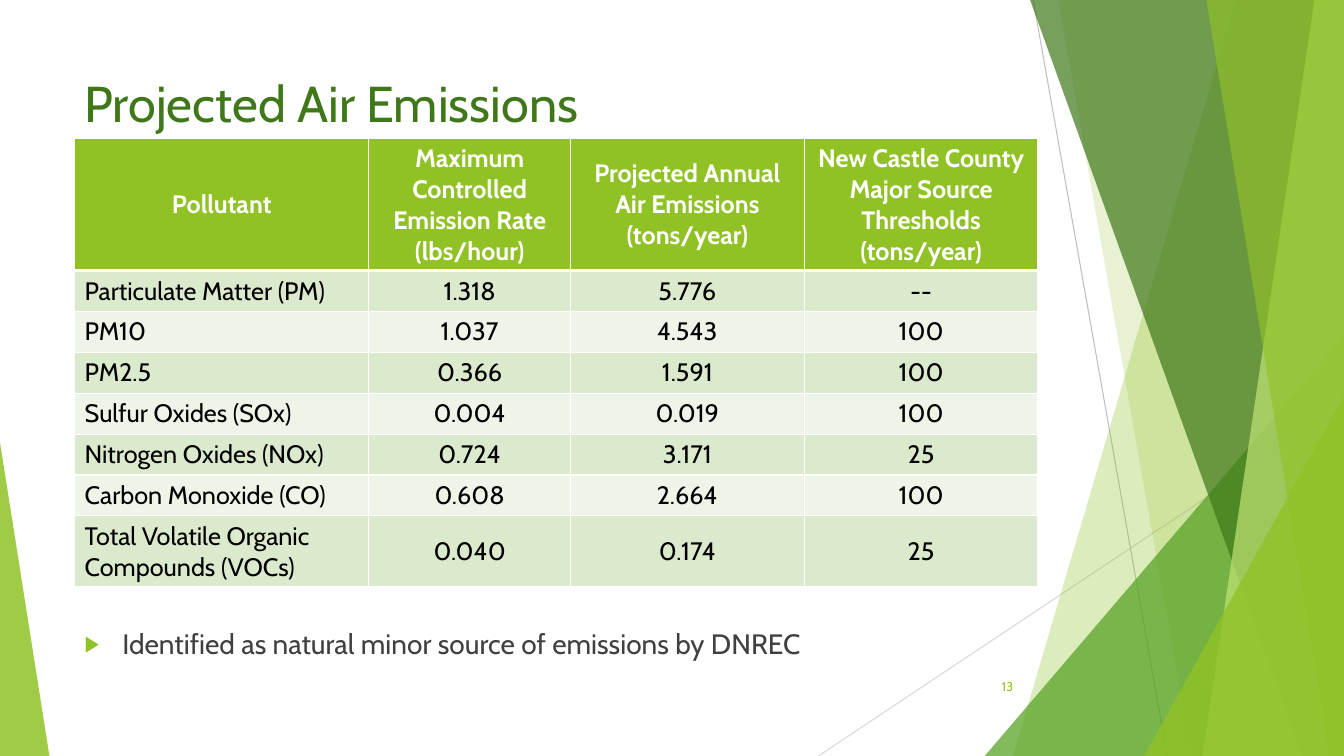
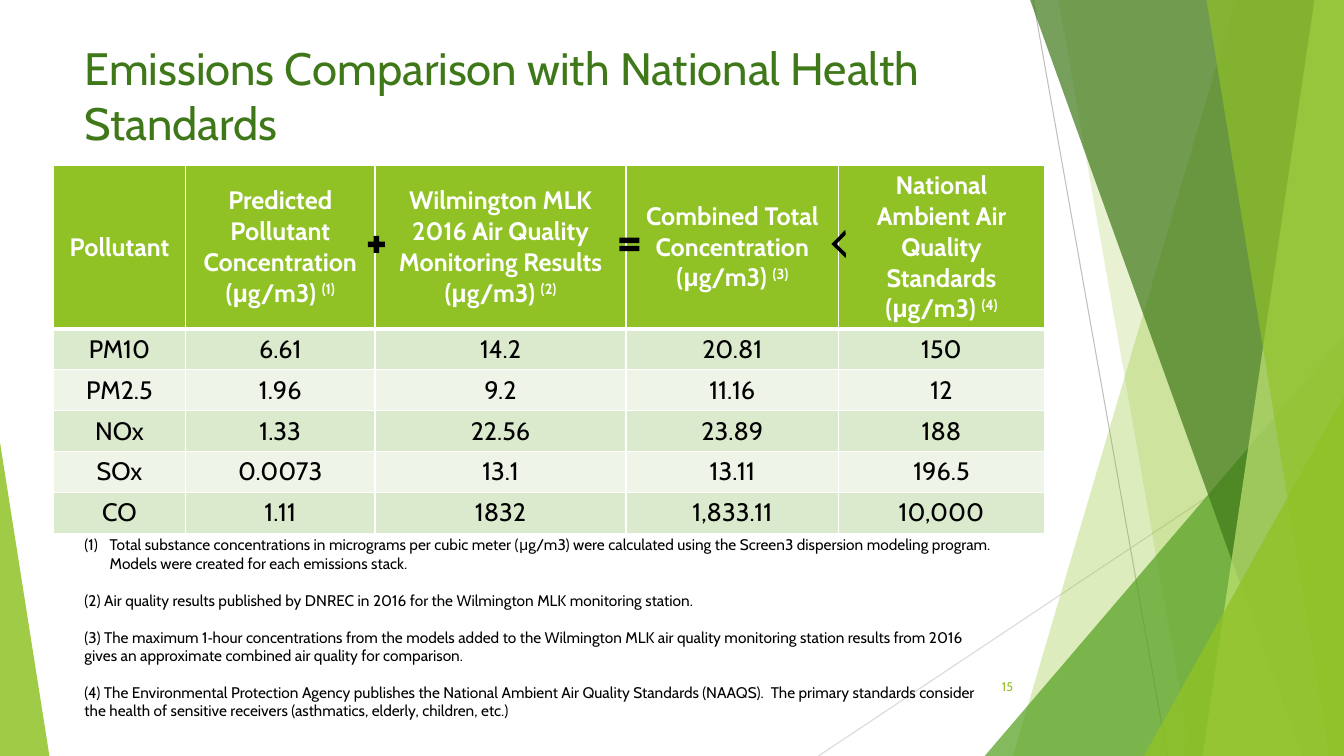
"""Build two slides on projected air emissions and national health standards."""
from lxml.etree import SubElement
from pptx import Presentation
from pptx.dml.color import RGBColor
from pptx.enum.shapes import MSO_CONNECTOR, MSO_SHAPE
from pptx.enum.text import MSO_ANCHOR as Anchor, PP_ALIGN as Align
from pptx.oxml.ns import qn
from pptx.util import Pt

LIME = RGBColor(0x90, 0xC2, 0x26)
PALE_LIME = RGBColor(0xC0, 0xE4, 0x74)
GREEN = RGBColor(0x54, 0xA0, 0x21)
DARK_GREEN = RGBColor(0x3F, 0x78, 0x19)
BANDS = (RGBColor(0xDB, 0xE9, 0xCD), RGBColor(0xEE, 0xF4, 0xE8))
WHITE = RGBColor(0xFF, 0xFF, 0xFF)
BLACK = RGBColor(0, 0, 0)
TEXT_GRAY = RGBColor(0x40, 0x40, 0x40)
LIGHT_GRAY = RGBColor(0xD9, 0xD9, 0xD9)
MID_GRAY = RGBColor(0xBF, 0xBF, 0xBF)
FONT, GREEK_FONT = "Cabin", "Arial"
WIDTH, HEIGHT = 960, 540
LEFT = 53.3
ROW_HEIGHT = 29.2

RAYS = [
    ((584.6, HEIGHT), (WIDTH, 290), LIGHT_GRAY),
    ((738, 0), (833.8, HEIGHT), MID_GRAY),
]
RIGHT_EDGE = [(WIDTH, HEIGHT), (WIDTH, 0)]
FACETS = [
    ([(882.7, 0), (723.6, HEIGHT), *RIGHT_EDGE], LIME, 30),
    ([(756, 0), (851, HEIGHT), *RIGHT_EDGE], LIME, 20),
    ([(703.4, HEIGHT), (WIDTH, 240), (WIDTH, HEIGHT)], GREEN, 72),
    ([(735.8, 0), (930.2, HEIGHT), *RIGHT_EDGE], DARK_GREEN, 70),
    ([(938.9, 0), (859, HEIGHT), *RIGHT_EDGE], PALE_LIME, 70),
    ([(861.8, 0), (949.7, HEIGHT), *RIGHT_EDGE], LIME, 65),
    ([(817.2, HEIGHT), (WIDTH, 283), (WIDTH, HEIGHT)], LIME, 80),
    ([(0, 316), (35.3, HEIGHT), (0, HEIGHT)], LIME, 85),
]

EMISSIONS_HEADER = [
    ("Pollutant", ""),
    ("Maximum Controlled Emission Rate (lbs/hour)", ""),
    ("Projected Annual Air Emissions (tons/year)", ""),
    ("New Castle County Major Source Thresholds\n(tons/year)", ""),
]
EMISSIONS = [
    ("Particulate Matter (PM)", "1.318", "5.776", "--"),
    ("PM10", "1.037", "4.543", "100"),
    ("PM2.5", "0.366", "1.591", "100"),
    ("Sulfur Oxides (SOx)", "0.004", "0.019", "100"),
    ("Nitrogen Oxides (NOx)", "0.724", "3.171", "25"),
    ("Carbon Monoxide (CO)", "0.608", "2.664", "100"),
    ("Total Volatile Organic Compounds (VOCs)", "0.040", "0.174", "25"),
]
EMISSIONS_NOTE = "Identified as natural minor source of emissions by DNREC"

STANDARDS_HEADER = [
    ("Pollutant", ""),
    ("Predicted Pollutant Concentration (μg/m3) ", "(1)"),
    ("Wilmington MLK 2016 Air Quality Monitoring Results (μg/m3) ", "(2)"),
    ("Combined Total Concentration (μg/m3) ", "(3)"),
    ("National Ambient Air Quality Standards (μg/m3) ", "(4)"),
]
STANDARDS = [
    ("PM10", "6.61", "14.2", "20.81", "150"),
    ("PM2.5", "1.96", "9.2", "11.16", "12"),
    ("NOx", "1.33", "22.56", "23.89", "188"),
    ("SOx", "0.0073", "13.1", "13.11", "196.5"),
    ("CO", "1.11", "1832", "1,833.11", "10,000"),
]
FOOTNOTES = [
    "Total substance concentrations in micrograms per cubic meter (μg/m3) were calculated using "
    "the Screen3 dispersion modeling program. Models were created for each emissions stack.",
    "(2) Air quality results published by DNREC in 2016 for the Wilmington MLK monitoring station.",
    "(3) The maximum 1‐hour concentrations from the models added to the Wilmington MLK air quality "
    "monitoring station results from 2016 gives an approximate combined air quality for comparison.",
    "(4) The Environmental Protection Agency publishes the National Ambient Air Quality Standards "
    "(NAAQS).  The primary standards consider the health of sensitive receivers (asthmatics, "
    "elderly, children, etc.)",
]
OPERATORS = [
    (MSO_SHAPE.MATH_PLUS, (260.6, 166.3, 16.6, 16.6), 0),
    (MSO_SHAPE.MATH_EQUAL, (439.9, 166.3, 19.4, 16.6), 0),
    (MSO_SHAPE.HALF_FRAME, (596.9, 167, 14.4, 14.4), 314.2),
]


def points(values):
    return [Pt(value) for value in values]


def add_runs(paragraph, text, size, color, bold=False, superscript=False):
    for piece in text.replace("μ", "\tμ\t").split("\t"):
        if piece:
            run = paragraph.add_run()
            run.text = piece
            font = run.font
            font.name = GREEK_FONT if piece == "μ" else FONT
            font.size, font.bold = Pt(size), bold
            font.color.rgb = color
            if superscript:
                font._element.set("baseline", "30000")


def add_text(slide, box, texts, size, color, anchor=Anchor.TOP, align=Align.LEFT, gap=0):
    frame = slide.shapes.add_textbox(*points(box)).text_frame
    frame.word_wrap = True
    frame.vertical_anchor = anchor
    for index, text in enumerate(texts):
        paragraph = frame.add_paragraph() if index else frame.paragraphs[0]
        paragraph.alignment = align
        if index:
            paragraph.space_before = Pt(gap)
        add_runs(paragraph, text, size, color)
    return frame


def add_bullet(paragraph, indent, *elements):
    properties = paragraph._p.get_or_add_pPr()
    properties.set("marL", str(Pt(indent)))
    properties.set("indent", str(-Pt(indent)))
    for tag, attributes in elements:
        parent = properties
        for name in tag.split("/"):
            parent = SubElement(parent, qn(name))
        for key, value in attributes.items():
            parent.set(key, value)


def add_decor(slide):
    for start, end, color in RAYS:
        line = slide.shapes.add_connector(MSO_CONNECTOR.STRAIGHT, *points(start + end))
        line.line.color.rgb = color
        line.line.width = Pt(0.75)
        SubElement(line._element.spPr, qn("a:effectLst"))
    for corners, color, opacity in FACETS:
        first, *rest = [points(corner) for corner in corners]
        builder = slide.shapes.build_freeform(*first)
        builder.add_line_segments(rest, close=True)
        facet = builder.convert_to_shape()
        fill_plain(facet, color)
        color_element = facet._element.spPr.find(qn("a:solidFill"))[0]
        SubElement(color_element, qn("a:alpha")).set("val", str(opacity * 1000))


def fill_plain(shape, color):
    shape.shadow.inherit = False
    shape.fill.solid()
    shape.fill.fore_color.rgb = color
    shape.line.fill.background()


def style_cell(cell, fill, top, bottom):
    properties = cell._tc.get_or_add_tcPr()
    for side, width in (("L", 1), ("R", 1), ("T", top), ("B", bottom)):
        border = SubElement(properties, qn(f"a:ln{side}"), w=str(Pt(width)))
        color = SubElement(SubElement(border, qn("a:solidFill")), qn("a:srgbClr"))
        color.set("val", str(WHITE))
    cell.fill.solid()
    cell.fill.fore_color.rgb = fill
    cell.vertical_anchor = Anchor.MIDDLE


def add_data_table(slide, left, top, widths, heights, header, rows, first_align):
    frame = slide.shapes.add_table(len(rows) + 1, len(widths), Pt(left), Pt(top),
                                   Pt(sum(widths)), Pt(sum(heights)))
    table = frame.table
    table.horz_banding = False
    for column, width in zip(table.columns, widths):
        column.width = Pt(width)
    for row, height in zip(table.rows, heights):
        row.height = Pt(height)
    for index, (text, mark) in enumerate(header):
        cell = table.cell(0, index)
        style_cell(cell, LIME, 1, 3)
        for number, line in enumerate(text.split("\n")):
            frame = cell.text_frame
            paragraph = frame.add_paragraph() if number else frame.paragraphs[0]
            paragraph.alignment = Align.CENTER
            add_runs(paragraph, line, 18, WHITE, bold=True)
        add_runs(paragraph, mark, 18, WHITE, bold=True, superscript=True)
    for row_index, values in enumerate(rows):
        for index, value in enumerate(values):
            cell = table.cell(row_index + 1, index)
            style_cell(cell, BANDS[row_index % 2], 1 if row_index else 3, 1)
            paragraph = cell.text_frame.paragraphs[0]
            paragraph.alignment = Align.CENTER if index else first_align
            add_runs(paragraph, value, 18, BLACK)


def add_base_slide(presentation, title, title_box, title_size, number):
    slide = presentation.slides.add_slide(presentation.slide_layouts[6])
    add_decor(slide)
    add_text(slide, title_box, [title], title_size, DARK_GREEN)
    add_text(slide, (676.8, 475.9, 54, 28.8), [number], 9, LIME, Anchor.MIDDLE, Align.RIGHT)
    return slide


def add_emissions_slide(presentation):
    slide = add_base_slide(presentation, "Projected Air Emissions",
                           (LEFT, 48.2, 676.8, 103.7), 36, "13")
    heights = [94.4] + [ROW_HEIGHT] * 6 + [50.8]
    add_data_table(slide, LEFT, 98.9, (210.2, 144, 167, 167), heights,
                   EMISSIONS_HEADER, EMISSIONS, Align.LEFT)
    note = add_text(slide, (LEFT, 444.2, 591.8, 31.7), [EMISSIONS_NOTE], 20, TEXT_GRAY)
    add_bullet(note.paragraphs[0], 27,
               ("a:buClr/a:srgbClr", {"val": str(LIME)}),
               ("a:buSzPct", {"val": "80000"}),
               ("a:buFont", {"typeface": GREEK_FONT}),
               ("a:buChar", {"char": "▶"}))


def add_standards_slide(presentation):
    slide = add_base_slide(presentation, "Emissions Comparison with National Health Standards",
                           (LEFT, 25.2, 676.8, 54), 32.4, "15")
    heights = [116.8] + [ROW_HEIGHT] * len(STANDARDS)
    add_data_table(slide, 38.2, 118.1, (94.3, 135.4, 179.3, 151.9, 146.9), heights,
                   STANDARDS_HEADER, STANDARDS, Align.CENTER)
    notes = add_text(slide, (LEFT, 378.7, 667.4, 145), FOOTNOTES, 11, BLACK, gap=13.2)
    add_bullet(notes.paragraphs[0], 18, ("a:buAutoNum", {"type": "arabicParenBoth"}))
    for kind, box, rotation in OPERATORS:
        operator = slide.shapes.add_shape(kind, *points(box))
        fill_plain(operator, BLACK)
        operator.rotation = rotation
        if kind == MSO_SHAPE.HALF_FRAME:
            operator.adjustments[0] = operator.adjustments[1] = 0.18


def main():
    presentation = Presentation()
    presentation.slide_width, presentation.slide_height = Pt(WIDTH), Pt(HEIGHT)
    add_emissions_slide(presentation)
    add_standards_slide(presentation)
    presentation.save("out.pptx")


if __name__ == "__main__":
    main()
